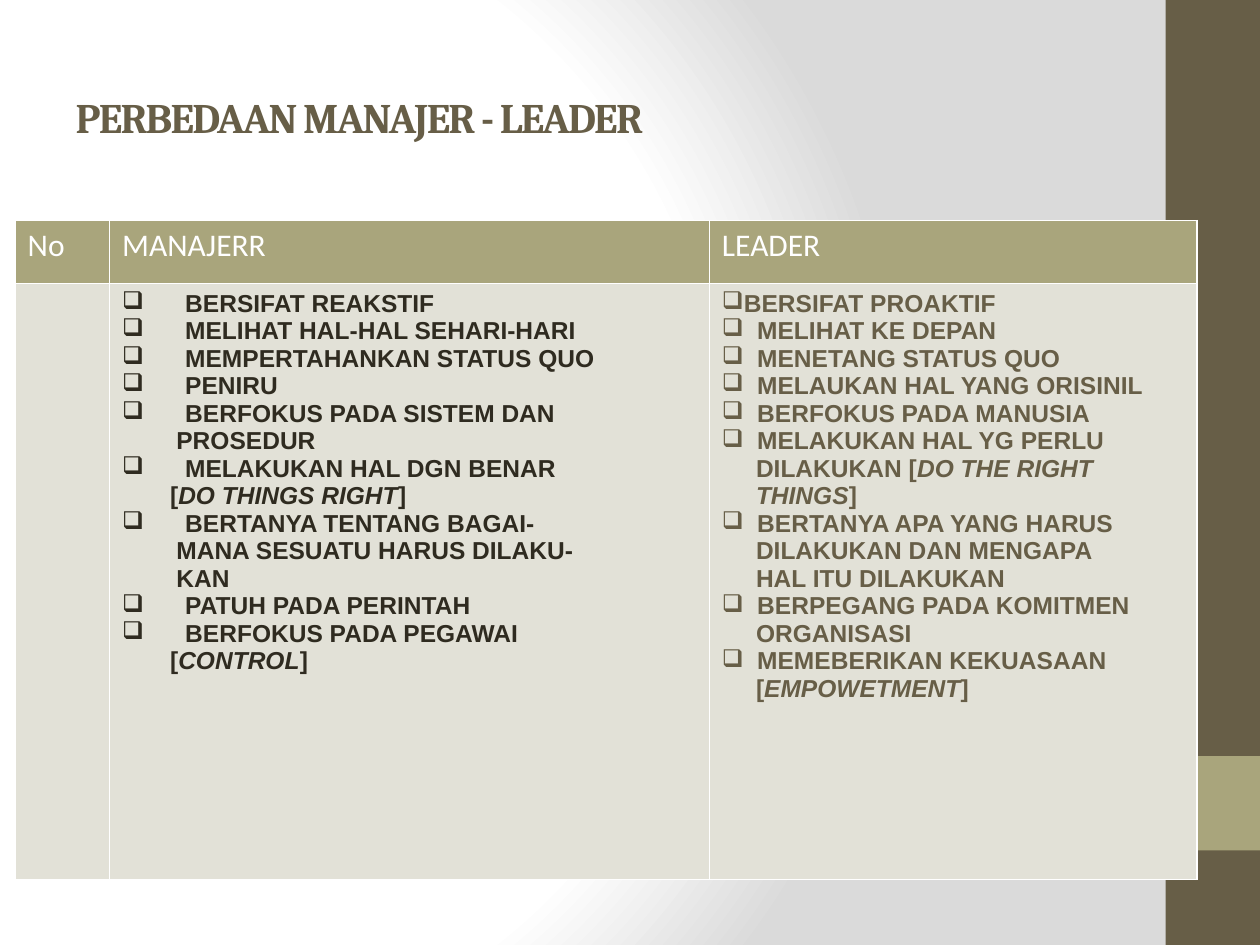
from lxml import etree
from pptx import Presentation
from pptx.dml.color import RGBColor
from pptx.enum.shapes import MSO_SHAPE as Shape
from pptx.enum.text import MSO_ANCHOR as Anchor, PP_ALIGN as Align
from pptx.oxml import parse_xml
from pptx.oxml.ns import nsdecls, qn
from pptx.util import Inches, Pt

BROWN = RGBColor(0x67, 0x5E, 0x47)
OLIVE = RGBColor(0xA9, 0xA5, 0x7C)
PALE = RGBColor(0xE2, 0xE1, 0xD7)
DARK = RGBColor(0x2F, 0x2B, 0x20)
WHITE = RGBColor(0xFF, 0xFF, 0xFF)

# Each item: bullet text indent, continuation indent, lines; asterisks enclose italics
MANAGER_ITEMS = [
    (0.5, 0, ["BERSIFAT REAKSTIF"]),
    (0.5, 0, ["MELIHAT HAL-HAL SEHARI-HARI"]),
    (0.5, 0, ["MEMPERTAHANKAN STATUS QUO"]),
    (0.5, 0, ["PENIRU"]),
    (0.5, 0.43, ["BERFOKUS PADA SISTEM DAN", "PROSEDUR"]),
    (0.5, 0.38, ["MELAKUKAN HAL DGN BENAR", "[*DO THINGS RIGHT*]"]),
    (0.5, 0.43, ["BERTANYA TENTANG BAGAI-", "MANA SESUATU HARUS DILAKU-", "KAN"]),
    (0.5, 0, ["PATUH PADA PERINTAH"]),
    (0.5, 0.38, ["BERFOKUS PADA PEGAWAI", "[*CONTROL*]"]),
]
LEADER_ITEMS = [
    (0, 0, ["BERSIFAT PROAKTIF"]),
    (0.28, 0, ["MELIHAT KE DEPAN"]),
    (0.28, 0, ["MENETANG STATUS QUO"]),
    (0.28, 0, ["MELAUKAN HAL YANG ORISINIL"]),
    (0.28, 0, ["BERFOKUS PADA MANUSIA"]),
    (0.28, 0.27, ["MELAKUKAN HAL YG PERLU", "DILAKUKAN [*DO THE RIGHT*", "*THINGS*]"]),
    (0.28, 0.27, ["BERTANYA APA YANG HARUS", "DILAKUKAN DAN MENGAPA", "HAL ITU DILAKUKAN"]),
    (0.28, 0.27, ["BERPEGANG PADA KOMITMEN", "ORGANISASI"]),
    (0.28, 0.27, ["MEMEBERIKAN KEKUASAAN", "[*EMPOWETMENT*]"]),
]


def style_cell(cell, color):
    properties = cell._tc.get_or_add_tcPr()
    for side in ("lnL", "lnR", "lnT", "lnB"):
        properties.append(parse_xml(
            f'<a:{side} {nsdecls("a")} w="{Pt(1)}"><a:solidFill>'
            f'<a:srgbClr val="{WHITE}"/></a:solidFill></a:{side}>'))
    cell.fill.solid()
    cell.fill.fore_color.rgb = color


def add_items(cell, items, color):
    lines = [(indent if number == 0 else follow_indent, number == 0, line)
             for indent, follow_indent, texts in items
             for number, line in enumerate(texts)]
    frame = cell.text_frame
    for position, (indent, bulleted, line) in enumerate(lines):
        paragraph = frame.add_paragraph() if position else frame.paragraphs[0]
        properties = paragraph._p.get_or_add_pPr()
        properties.set("marL", str(Inches(indent)))
        properties.set("indent", str(Inches(-indent) if bulleted else 0))
        if bulleted:
            etree.SubElement(properties, qn("a:buChar"), char="❑")
        else:
            etree.SubElement(properties, qn("a:buNone"))
        font = paragraph.font
        font.name, font.size, font.bold = "Arial", Pt(14), True
        font.color.rgb = color
        for part_number, part in enumerate(line.split("*")):
            if part:
                run = paragraph.add_run()
                run.text = part
                if part_number % 2:
                    run.font.italic = True


presentation = Presentation()
presentation.slide_width = Inches(10)
presentation.slide_height = Inches(7.5)
slide = presentation.slides.add_slide(presentation.slide_layouts[5])

stops = "".join(f'<a:gs pos="{position * 1000}"><a:srgbClr val="{color}"/></a:gs>'
                for position, color in ((0, "FFFFFF"), (75, "FFFFFF"), (100, "DADADA")))
slide.element.cSld.insert(0, parse_xml(
    f'<p:bg {nsdecls("p", "a")}><p:bgPr><a:gradFill rotWithShape="1">'
    f'<a:gsLst>{stops}</a:gsLst><a:path path="circle">'
    '<a:fillToRect l="20000" t="50000" r="100000" b="50000"/></a:path>'
    '</a:gradFill><a:effectLst/></p:bgPr></p:bg>'))

for top, height, color in ((0, 7.5, BROWN), (6, 0.75, OLIVE)):
    band = slide.shapes.add_shape(
        Shape.RECTANGLE, Inches(9.25), Inches(top), Inches(0.75), Inches(height))
    band.shadow.inherit = False
    band.fill.solid()
    band.fill.fore_color.rgb = color
    band.line.fill.background()

title = slide.shapes.title
title.left, title.top = Inches(0.5), Inches(0.3)
title.width, title.height = Inches(8.33), Inches(1.25)
title.text_frame.vertical_anchor = Anchor.MIDDLE
paragraph = title.text_frame.paragraphs[0]
paragraph.alignment = Align.LEFT
run = paragraph.add_run()
run.text = "PERBEDAAN MANAJER - LEADER"
paragraph.font.name, paragraph.font.size, paragraph.font.bold = "Cambria", Pt(24), True
paragraph.font.color.rgb = BROWN
run.font._element.set("spc", "-100")

table = slide.shapes.add_table(
    2, 3, Inches(0.12), Inches(1.75), Inches(9.38), Inches(5.23)).table
table.horz_banding = False
table.first_row = False
for column, width in zip(table.columns, (0.75, 4.76, 3.87)):
    column.width = Inches(width)
for row, height, color in zip(table.rows, (0.5, 4.73), (OLIVE, PALE)):
    row.height = Inches(height)
    for cell in row.cells:
        style_cell(cell, color)

for cell, heading in zip(table.rows[0].cells, ("No", "MANAJERR", "LEADER")):
    cell.text = heading
    font = cell.text_frame.paragraphs[0].font
    font.name, font.size = "Calibri", Pt(18)
    font.color.rgb = WHITE
add_items(table.cell(1, 1), MANAGER_ITEMS, DARK)
add_items(table.cell(1, 2), LEADER_ITEMS, BROWN)

presentation.save("out.pptx")
